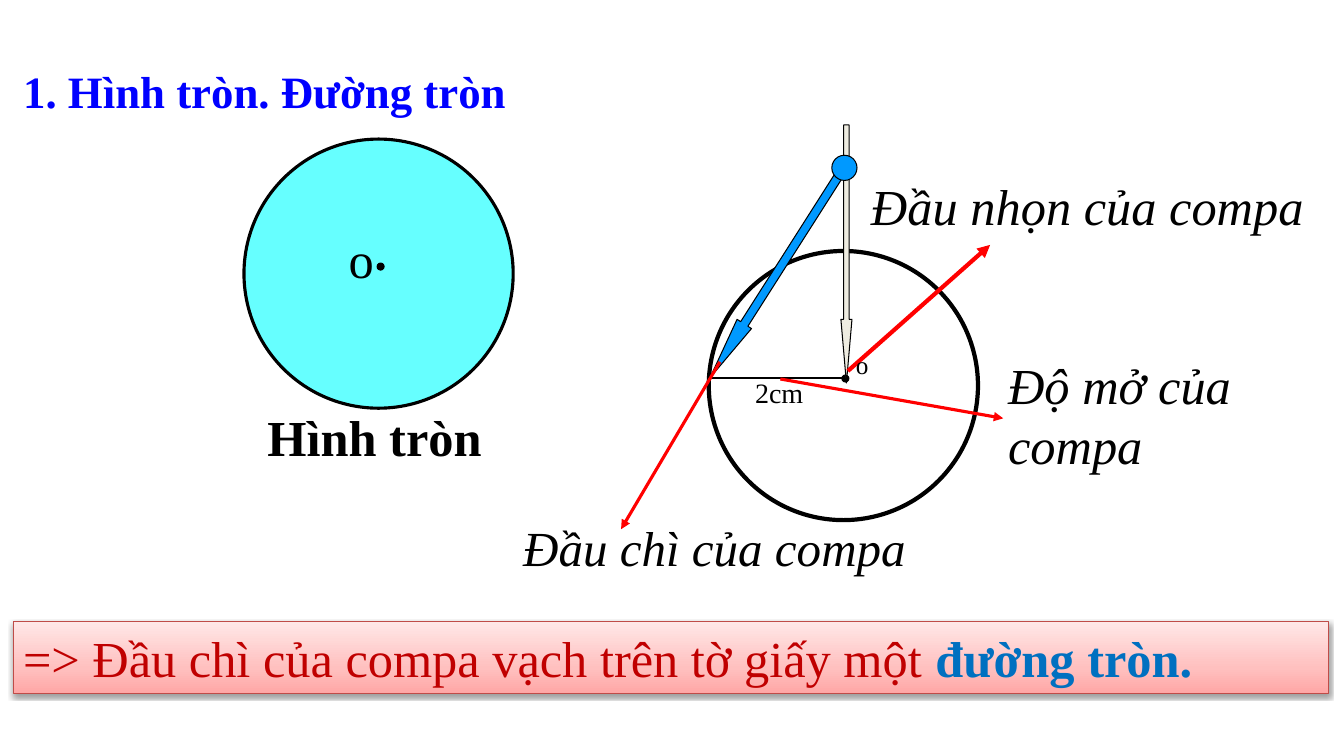
from lxml.etree import SubElement
from pptx import Presentation
from pptx.dml.color import RGBColor
from pptx.enum.shapes import MSO_CONNECTOR, MSO_SHAPE
from pptx.enum.text import MSO_ANCHOR, MSO_AUTO_SIZE, PP_ALIGN
from pptx.oxml.ns import qn
from pptx.util import Inches, Pt


def rgb(value):
    return RGBColor.from_string(value)


def write(sp, text, size=36, color="000000", bold=False, italic=False, align=PP_ALIGN.LEFT):
    """Append a formatted run to the first paragraph of a shape."""
    tf = sp.text_frame
    tf.word_wrap = True
    tf.auto_size = MSO_AUTO_SIZE.NONE
    tf.vertical_anchor = MSO_ANCHOR.TOP
    p = tf.paragraphs[0]
    p.alignment = align
    p.line_spacing = 1.0
    p.space_before = Pt(0)
    r = p.add_run()
    r.text = text
    r.font.name = "Times New Roman"
    r.font.size = Pt(size)
    r.font.bold = bold
    r.font.italic = italic
    r.font.color.rgb = rgb(color)


prs = Presentation()
prs.slide_width, prs.slide_height = Inches(13.33), Inches(7.5)
slide = prs.slides.add_slide(prs.slide_layouts[5])
shapes = slide.shapes

title = shapes.title
title.left, title.top, title.width, title.height = map(Inches, (0.13, 0.58, 5.33, 0.64))
write(title, "1. Hình tròn. Đường tròn", size=32, color="0000FF", bold=True)

# Circles and the two legs of the compass, back to front
OVAL, LEG = MSO_SHAPE.OVAL, MSO_SHAPE.DOWN_ARROW
for kind, box, fill, weight, rotation, head in [
    (OVAL, (2.42, 1.38, 2.67, 2.67), "66FFFF", 2.25, 0, None),
    (OVAL, (3.74, 2.61, 0.07, 0.07), "000000", 0.75, 0, None),
    (OVAL, (7.03, 2.49, 2.67, 2.67), "FFFFFF", 3, 0, None),
    (OVAL, (8.35, 3.72, 0.07, 0.07), "000000", 0.75, 0, None),
    (LEG, (7.65, 1.37, 0.17, 2.58), "0099FF", 0.75, 32.5, 3.72),
    (LEG, (8.34, 1.24, 0.11, 2.56), "EEECE1", 0.75, 0, 5.75),
    (OVAL, (8.25, 1.54, 0.25, 0.25), "0099FF", 0.75, 0, None),
]:
    sp = shapes.add_shape(kind, *map(Inches, box))
    sp.shadow.inherit = False
    sp.fill.solid()
    sp.fill.fore_color.rgb = rgb(fill)
    sp.line.color.rgb = rgb("000000")
    sp.line.width = Pt(weight)
    sp.rotation = rotation
    if head:
        sp.adjustments[0], sp.adjustments[1] = 0.5, head

# Radius, then the pointers to the labels
for ends, color, weight in [
    ((7.05, 3.75, 8.38, 3.75), "000000", 0.75),
    ((8.41, 3.68, 9.82, 2.43), "FF0000", 3),
    ((7.14, 3.59, 6.16, 5.25), "FF0000", 2.25),
    ((7.74, 3.76, 9.95, 4.15), "FF0000", 2.25),
]:
    line = shapes.add_connector(MSO_CONNECTOR.STRAIGHT, *map(Inches, ends))
    line.line.color.rgb = rgb(color)
    line.line.width = Pt(weight)
    if color == "FF0000":
        SubElement(line.line._get_or_add_ln(), qn("a:tailEnd"), type="triangle")
    SubElement(line._element.spPr, qn("a:effectLst"))

for text, box, style in [
    ("o", (3.36, 2.21, 0.58, 0.71), {}),
    ("o", (8.39, 3.42, 0.33, 0.4), {"size": 18}),
    ("2cm", (7.39, 3.68, 0.75, 0.43), {"size": 20}),
    ("Hình tròn", (2.42, 3.98, 2.59, 0.71), {"bold": True, "align": PP_ALIGN.CENTER}),
    ("Đầu nhọn của compa", (8.54, 1.69, 4.75, 0.71), {"italic": True}),
    ("Đầu chì của compa", (5.09, 5.08, 4.69, 0.69), {"size": 35, "italic": True}),
    ("Độ mở của compa", (9.9, 3.46, 3.42, 1.31), {"italic": True}),
]:
    write(shapes.add_textbox(*map(Inches, box)), text, **style)

# Conclusion bar with a three-stop gradient and a soft shadow
bar = shapes.add_shape(MSO_SHAPE.RECTANGLE, *map(Inches, (0.13, 6.17, 13.05, 0.71)))
bar.shadow.inherit = False
bar.line.color.rgb = rgb("BF4C48")
bar.line.width = Pt(0.75)
bar.fill.gradient()
bar.fill.gradient_angle = 90
spPr = bar._element.spPr
stops = spPr.find(qn("a:gradFill")).find(qn("a:gsLst"))
for stop in list(stops):
    stops.remove(stop)
for position, color in [(0, "FFA6A5"), (35, "FFC0BF"), (100, "FFE7E7")]:
    stop = SubElement(stops, qn("a:gs"), pos=str(position * 1000))
    SubElement(stop, qn("a:srgbClr"), val=color)
shadow = SubElement(spPr.find(qn("a:effectLst")), qn("a:outerShdw"), blurRad=str(Pt(3.1)),
                    dist=str(Pt(1.6)), dir=str(90 * 60000), rotWithShape="0")
shade = SubElement(shadow, qn("a:srgbClr"), val="000000")
SubElement(shade, qn("a:alpha"), val="38000")
write(bar, "=> Đầu chì của compa vạch trên tờ giấy một ", color="C00000")
write(bar, "đường tròn.", color="0070C0", bold=True)

prs.save("out.pptx")
